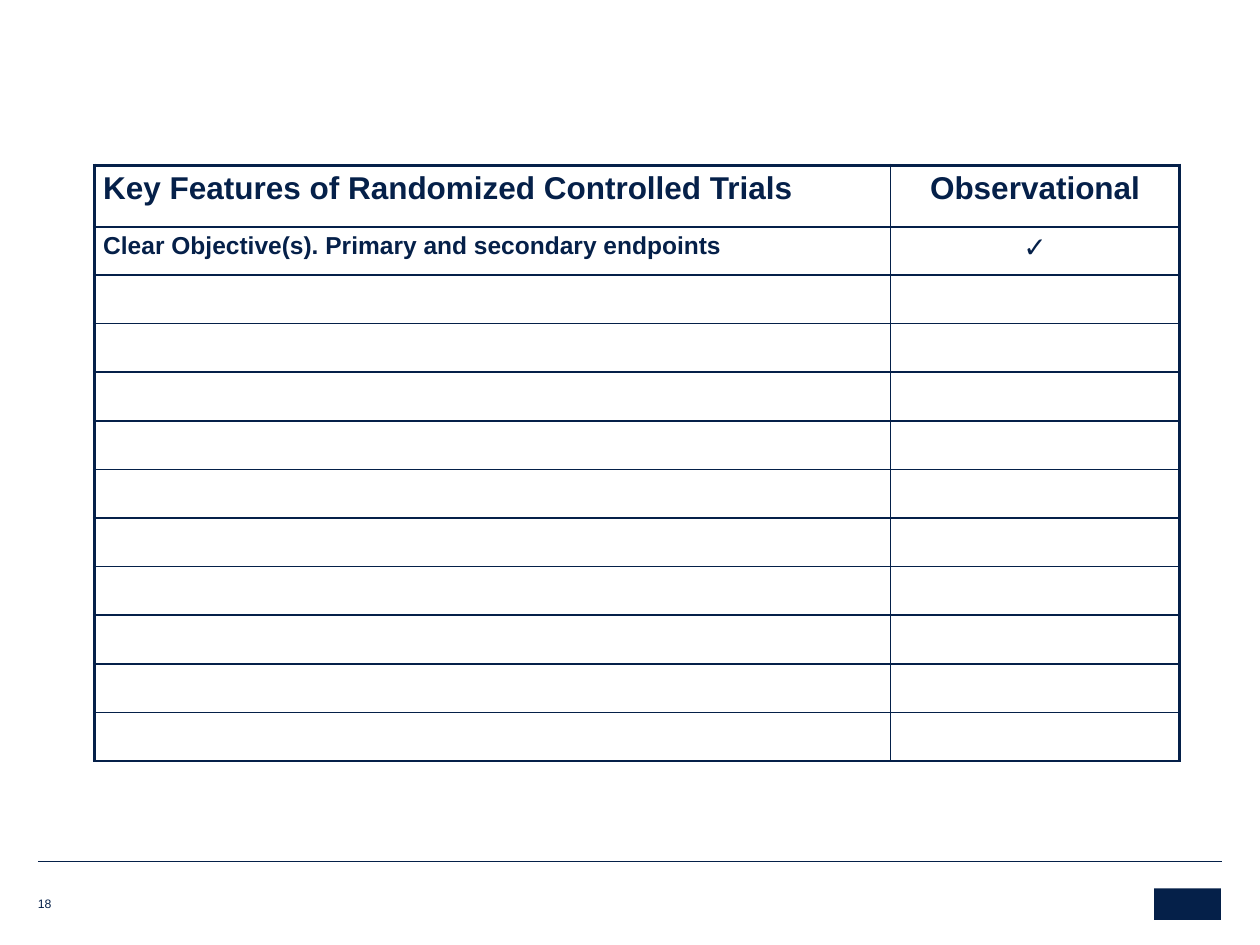
from lxml import etree
from pptx import Presentation
from pptx.dml.color import RGBColor
from pptx.enum.shapes import MSO_CONNECTOR, MSO_SHAPE
from pptx.enum.text import MSO_ANCHOR, PP_ALIGN
from pptx.oxml.ns import qn
from pptx.util import Pt

NAVY = RGBColor(0x05, 0x20, 0x49)
STRAIGHT = MSO_CONNECTOR.STRAIGHT
RECTANGLE = MSO_SHAPE.RECTANGLE
BOTTOM = MSO_ANCHOR.BOTTOM
LEFT, CENTER = PP_ALIGN.LEFT, PP_ALIGN.CENTER
THIN, THICK = 1, 2.25


def write(para, words, size, bold=False):
    span = para.add_run()
    span.text = words
    formats = {"name": "Arial", "size": Pt(size), "bold": bold}
    for key, value in formats.items():
        setattr(span.font, key, value)
    span.font.color.rgb = NAVY


def set_borders(cell, widths):
    properties = cell._tc.get_or_add_tcPr()
    for side, width in widths.items():
        line = etree.SubElement(properties, qn(f"a:ln{side}"), w=str(int(Pt(width))))
        fill = etree.SubElement(line, qn("a:solidFill"))
        etree.SubElement(fill, qn("a:srgbClr"), val=str(NAVY))


deck = Presentation()
deck.slide_width, deck.slide_height = Pt(720), Pt(540)
page = deck.slides.add_slide(deck.slide_layouts[6])

# Footer rules
for left, right in ((28.8, 691.2), (21.6, 698.4)):
    rule = page.shapes.add_connector(STRAIGHT, Pt(left), Pt(492.4), Pt(right), Pt(492.4))
    rule.line.color.rgb = NAVY
    rule.line.width = Pt(0.25)
    etree.SubElement(rule._element.spPr, qn("a:effectLst"))

# Plain block in the logo's place
block = page.shapes.add_shape(RECTANGLE, Pt(659.5), Pt(507.6), Pt(38.2), Pt(18))
block.shadow.inherit = False
block.fill.solid()
block.fill.fore_color.rgb = NAVY
block.line.fill.background()

# Feature table
texts = {
    (0, 0): ("Key Features of Randomized Controlled Trials", 18, True),
    (0, 1): ("Observational", 18, True),
    (1, 0): ("Clear Objective(s). Primary and secondary endpoints", 14, True),
    (1, 1): ("✓", 16, False),
}
column_widths = (455, 165)
row_heights = [35.2] + [27.43] * 11
last_row = len(row_heights) - 1
frame = page.shapes.add_table(len(row_heights), len(column_widths), Pt(54), Pt(94.5),
                              Pt(sum(column_widths)), Pt(sum(row_heights)))
table = frame.table
table.first_row = table.horz_banding = False
for column, width in zip(table.columns, column_widths):
    column.width = Pt(width)
for row, height in zip(table.rows, row_heights):
    row.height = Pt(height)

margins = {"margin_left": 5, "margin_right": 5, "margin_top": 2.9, "margin_bottom": 2.9}
for row_index in range(len(row_heights)):
    for column_index, alignment in enumerate((LEFT, CENTER)):
        cell = table.cell(row_index, column_index)
        for key, value in margins.items():
            setattr(cell, key, Pt(value))
        set_borders(cell, {
            "L": THICK if column_index == 0 else THIN,
            "R": THICK if column_index == 1 else THIN,
            "T": THICK if row_index == 0 else THIN,
            "B": THIN,
        })
        cell.fill.background()
        para = cell.text_frame.paragraphs[0]
        para.alignment = alignment
        if (row_index, column_index) in texts:
            write(para, *texts[row_index, column_index])

# Slide number
number_box = page.shapes.add_textbox(Pt(21.6), Pt(508.3), Pt(19.4), Pt(12.2))
number_formats = {"word_wrap": True, "vertical_anchor": BOTTOM, "margin_left": 0,
                  "margin_right": 0, "margin_top": 0, "margin_bottom": 0}
for key, value in number_formats.items():
    setattr(number_box.text_frame, key, value)
write(number_box.text_frame.paragraphs[0], "18", 7)

deck.save("out.pptx")
